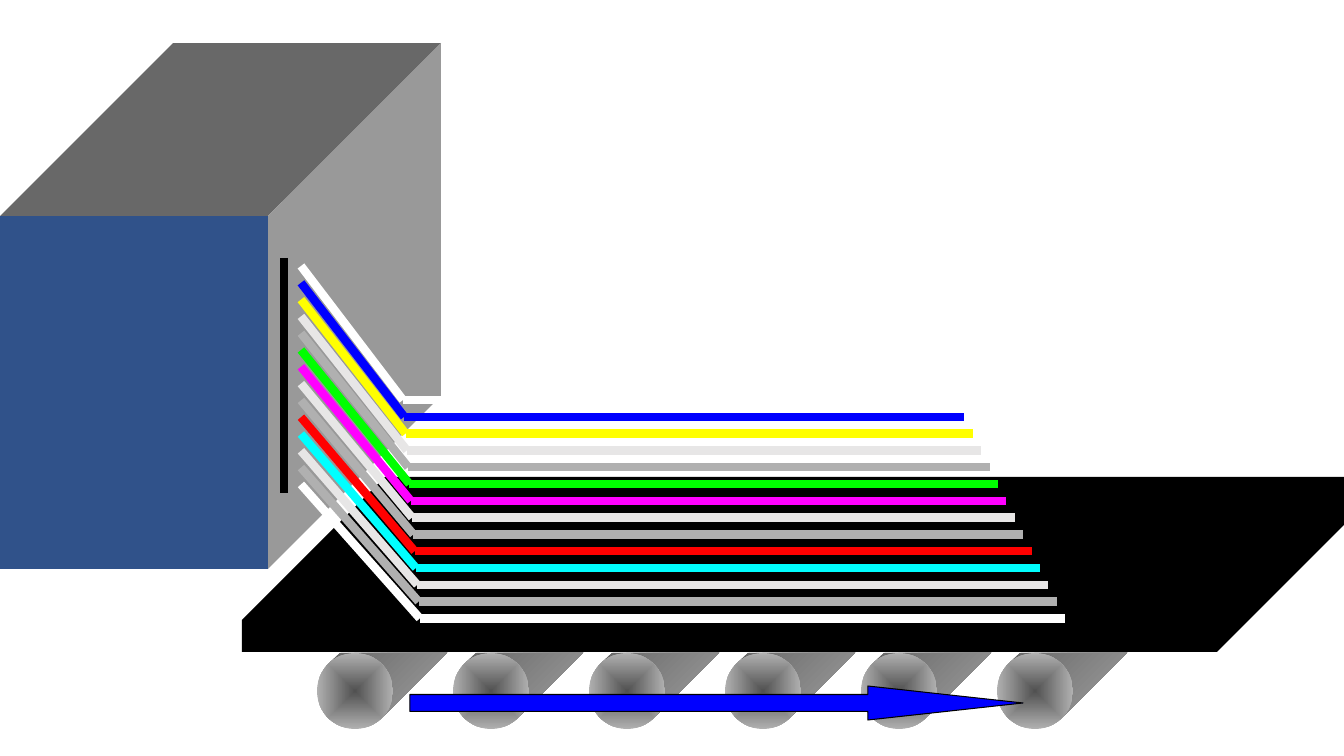
from lxml import etree
from pptx import Presentation
from pptx.dml.color import RGBColor
from pptx.enum import shapes as kinds
from pptx.oxml import ns
from pptx.util import Pt

PX = 914400 / 100.8
SLIDE_WIDTH, SLIDE_HEIGHT = 1344, 756

BLACK = RGBColor(0x00, 0x00, 0x00)
WHITE = RGBColor(0xFF, 0xFF, 0xFF)
BLUE = RGBColor(0x00, 0x00, 0xFF)
YELLOW = RGBColor(0xFF, 0xFF, 0x00)
GREEN = RGBColor(0x00, 0xFF, 0x00)
MAGENTA = RGBColor(0xFF, 0x00, 0xFF)
RED = RGBColor(0xFF, 0x00, 0x00)
CYAN = RGBColor(0x00, 0xFF, 0xFF)
PALE = RGBColor(0xE7, 0xE6, 0xE6)
SILVER = RGBColor(0xB0, 0xB0, 0xB0)
CABINET_FRONT = RGBColor(0x30, 0x52, 0x8A)
CABINET_TOP = RGBColor(0x68, 0x68, 0x68)
CABINET_SIDE = RGBColor(0x99, 0x99, 0x99)
HUB = RGBColor(0x51, 0x51, 0x51)
BARREL_DARK = RGBColor(0x68, 0x68, 0x68)
BARREL_LIGHT = RGBColor(0xA0, 0xA0, 0xA0)

# Strands from top to bottom
STRANDS = [WHITE, BLUE, YELLOW, PALE, SILVER, GREEN, MAGENTA,
           PALE, SILVER, RED, CYAN, PALE, SILVER, WHITE]


def emu(*lengths):
    return [round(length * PX) for length in lengths]


def finish(shape, fill=None):
    """Remove shadow and outline, and apply a solid fill if one is given."""
    shape.shadow.inherit = False
    shape.line.fill.background()
    if fill is not None:
        shape.fill.solid()
        shape.fill.fore_color.rgb = fill
    return shape


def add_preset(slide, kind, box, fill=None):
    return finish(slide.shapes.add_shape(kind, *emu(*box)), fill)


def add_polygon(slide, points, fill=None):
    outline = slide.shapes.build_freeform(*points[0], scale=PX)
    outline.add_line_segments(points[1:], close=True)
    return finish(outline.convert_to_shape(), fill)


def add_line(shapes, start, end, color):
    line = shapes.add_connector(kinds.MSO_CONNECTOR.STRAIGHT, *emu(*start, *end))
    line.line.color.rgb = color
    line.line.width = Pt(6)
    etree.SubElement(line._element.spPr, ns.qn("a:effectLst"))


def set_gradient(shape, first, last, angle=0):
    shape.fill.gradient()
    shape.fill.gradient_angle = angle
    for stop, color, position in zip(shape.fill.gradient_stops, (first, last), (0, 1)):
        stop.color.rgb = color
        stop.position = position


def set_centred_gradient(shape, centre, rim):
    set_gradient(shape, centre, rim)
    linear = shape._element.spPr.find(".//" + ns.qn("a:lin"))
    path = etree.Element(ns.qn("a:path"), path="shape")
    etree.SubElement(path, ns.qn("a:fillToRect"),
                     l="50000", t="50000", r="50000", b="50000")
    linear.getparent().replace(linear, path)


def add_cabinet(slide, left, top, width, height, depth):
    """Box receding up and to the right, with an outlet slot in its side."""
    right, bottom = left + width, top + height
    back, back_top = right + depth, top - depth
    add_polygon(slide, [(left, top), (left + depth, back_top),
                        (back, back_top), (right, top)], CABINET_TOP)
    add_polygon(slide, [(right, top), (back, back_top),
                        (back, bottom - depth), (right, bottom)], CABINET_SIDE)
    add_preset(slide, kinds.MSO_SHAPE.RECTANGLE,
               (left, top, width, height), CABINET_FRONT)
    add_line(slide.shapes, (right + 16, top + 42), (right + 16, top + 277), BLACK)


def add_roller(slide, left, top, size):
    """Round end face with a barrel running up under the belt."""
    centre_x, centre_y = left + size // 2, top + size // 2
    tangent = round(size / 2 * 0.707)
    reach = centre_y + tangent - top
    barrel = add_polygon(slide, [
        (centre_x - tangent, centre_y - tangent),
        (centre_x - tangent + 12, top),
        (centre_x + tangent + reach, top),
        (centre_x + tangent, centre_y + tangent)])
    set_gradient(barrel, BARREL_DARK, BARREL_LIGHT, 315)
    face = add_preset(slide, kinds.MSO_SHAPE.OVAL, (left, top, size, size))
    set_centred_gradient(face, HUB, SILVER)


def add_belt(slide, left, top, width, height, thickness):
    """Slab receding up and to the right as far as the slide's edge."""
    bottom, right = top + height, left + width
    depth = height - thickness
    front_edge = bottom - (SLIDE_WIDTH - right)
    add_polygon(slide, [
        (left, bottom), (left, bottom - thickness), (left + depth, top),
        (SLIDE_WIDTH, top), (SLIDE_WIDTH, front_edge), (right, bottom)], BLACK)


def add_strands(slide, left, top):
    """Strands that slope down from the slot and run along the belt."""
    for index, color in reversed(list(enumerate(STRANDS))):
        drop = index * 16.8
        bend = (left + 102 + index * 1.3, top + 134 + drop)
        end = (left + 655 + index * 8.4, bend[1])
        strand = slide.shapes.add_group_shape().shapes
        add_line(strand, bend, end, color)
        add_line(strand, bend, (left, top + drop), color)


def add_direction_arrow(slide, left, top, width, height):
    arrow = add_preset(slide, kinds.MSO_SHAPE.RIGHT_ARROW,
                       (left, top, width, height), BLUE)
    arrow.adjustments[0] = 0.5
    arrow.adjustments[1] = 4.56
    arrow.line.color.rgb = BLACK
    arrow.line.width = Pt(0.75)


def main():
    deck = Presentation()
    deck.slide_width, deck.slide_height = emu(SLIDE_WIDTH, SLIDE_HEIGHT)
    slide = deck.slides.add_slide(deck.slide_layouts[6])
    add_cabinet(slide, 0, 216, 268, 353, 173)
    for index in range(6):
        add_roller(slide, 317 + index * 136, 653, 76)
    add_belt(slide, 242, 477, 975, 175, 32)
    add_strands(slide, 301, 266)
    add_direction_arrow(slide, 410, 686, 613, 34)
    deck.save("out.pptx")


if __name__ == "__main__":
    main()
